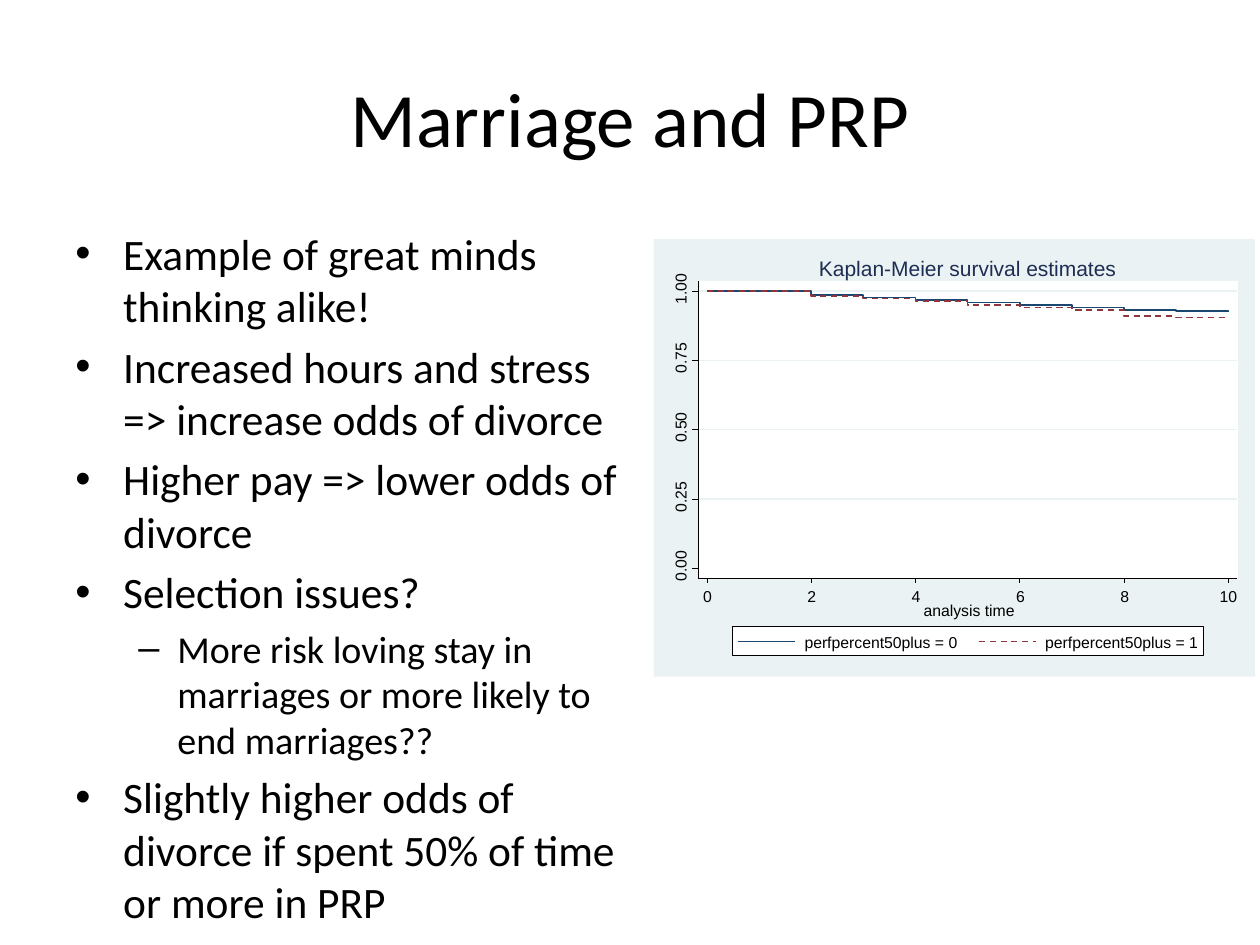
from dataclasses import dataclass
from typing import Optional

from lxml.etree import SubElement
from pptx import Presentation
from pptx.dml.color import RGBColor
from pptx.enum.dml import MSO_LINE
from pptx.enum.shapes import MSO_CONNECTOR, MSO_SHAPE
from pptx.enum.text import MSO_ANCHOR, MSO_AUTO_SIZE, PP_ALIGN
from pptx.oxml.ns import qn
from pptx.util import Inches, Length, Pt

COLORS = {
    "ink": "000000",
    "paper": "FFFFFF",
    "panel": "EAF2F3",
    "zero": "1A476F",
    "one": "90353B",
    "heading": "1E2D53",
}
COLUMNS, ROWS = 100, 75
THIN, THICK = 0.38, 0.88
PLOT_LEFT, PLOT_RIGHT, PLOT_TOP, PLOT_BOTTOM = 55.4, 98.2, 22.3, 45.9
LEGEND_ROW = 50.9

presentation = Presentation()
presentation.slide_width = Inches(10)
presentation.slide_height = Inches(7.5)
slide = presentation.slides.add_slide(presentation.slide_layouts[6])


@dataclass(frozen=True)
class Box:
    column: float
    row: float
    columns: float
    rows: float


@dataclass(frozen=True)
class Bullet:
    text: str
    level: int = 0


@dataclass(frozen=True)
class BulletStyle:
    mark: str
    size: float
    margin: float
    hanging: float


@dataclass(frozen=True)
class Series:
    name: str
    color: str
    dash: Optional[MSO_LINE]
    survival: tuple
    key_column: float


BULLET_STYLES = (
    BulletStyle("•", 24.8, 0.38, 0.38),
    BulletStyle("–", 21.7, 0.81, 0.31),
)
BULLETS = (
    Bullet("Example of great minds thinking alike!"),
    Bullet("Increased hours and stress => increase odds of divorce"),
    Bullet("Higher pay => lower odds of divorce"),
    Bullet("Selection issues?"),
    Bullet("More risk loving stay in marriages or more likely to end marriages??", 1),
    Bullet("Slightly higher odds of divorce if spent 50% of time or more in PRP"),
)
PANELS = (
    (Box(51.9, 19, 47.7, 34.7), "panel", None),
    (Box(51.9, 19, 47.5, 34.5), "panel", "panel"),
    (Box(PLOT_LEFT, PLOT_TOP, PLOT_RIGHT - PLOT_LEFT, 23.5), "paper", "paper"),
)
SERIES = (
    Series("perfpercent50plus = 0", "zero", None,
           (98.6, 97.7, 96.8, 95.9, 95, 94.1, 93.2, 92.7, 92.3), 58.6),
    Series("perfpercent50plus = 1", "one", MSO_LINE.DASH,
           (98.2, 97.3, 96.4, 95, 94.1, 93.2, 90.9, 90.5, 90.5), 77.7),
)


def across(column: float) -> Length:
    return Length(round(presentation.slide_width * column / COLUMNS))


def down(row: float) -> Length:
    return Length(round(presentation.slide_height * row / ROWS))


def place(box: Box) -> tuple:
    return across(box.column), down(box.row), across(box.columns), down(box.rows)


def time_column(time: float) -> float:
    return 56.1 + 4.14 * time


def survival_row(percent: float) -> float:
    return 45.1 - 0.22 * percent


def color(name: str) -> RGBColor:
    return RGBColor.from_string(COLORS[name])


def apply(target: object, values: dict) -> None:
    for name, value in values.items():
        setattr(target, name, value)


def style_line(shape: object, name: str, width: float, dash: Optional[MSO_LINE] = None) -> None:
    shape.line.color.rgb = color(name)
    apply(shape.line, {"width": Pt(width), "dash_style": dash})


def write(paragraph: object, text: str, size: float, font: str, name: str = "ink") -> None:
    run = paragraph.add_run()
    run.text = text
    apply(run.font, {"size": Pt(size), "name": font})
    run.font.color.rgb = color(name)


def draw_panel(box: Box, fill: str, line: Optional[str]) -> None:
    shape = slide.shapes.add_shape(MSO_SHAPE.RECTANGLE, *place(box))
    shape.shadow.inherit = False
    shape.fill.solid()
    shape.fill.fore_color.rgb = color(fill)
    if line:
        style_line(shape, line, THIN)
    else:
        shape.line.fill.background()


def draw_line(start: tuple, end: tuple, name: str = "ink", width: float = THIN,
              dash: Optional[MSO_LINE] = None) -> None:
    connector = slide.shapes.add_connector(
        MSO_CONNECTOR.STRAIGHT, across(start[0]), down(start[1]), across(end[0]), down(end[1]))
    SubElement(connector.element.spPr, qn("a:effectLst"))
    style_line(connector, name, width, dash)


def draw_label(text: str, box: Box, size: float = 9, name: str = "ink", rotation: float = 0) -> None:
    shape = slide.shapes.add_textbox(*place(box))
    shape.rotation = rotation
    apply(shape.text_frame, {
        "margin_left": 0, "margin_top": 0, "margin_right": 0, "margin_bottom": 0,
        "word_wrap": False, "auto_size": MSO_AUTO_SIZE.SHAPE_TO_FIT_TEXT,
    })
    write(shape.text_frame.paragraphs[0], text, size, "Arial", name)


def draw_curve(series: Series) -> None:
    points, level = [], 100
    for time, percent in enumerate(series.survival, start=2):
        points += [(time, level), (time, percent)]
        level = percent
    corners = [(across(time_column(time)), down(survival_row(percent))) for time, percent in points]
    builder = slide.shapes.build_freeform(across(time_column(0)), down(survival_row(100)))
    builder.add_line_segments(corners, close=False)
    shape = builder.convert_to_shape()
    shape.shadow.inherit = False
    shape.fill.background()
    style_line(shape, series.color, THICK, series.dash)


def draw_title(text: str) -> None:
    shape = slide.shapes.add_textbox(*place(Box(5, 3, 90, 12.5)))
    apply(shape.text_frame, {"word_wrap": True, "vertical_anchor": MSO_ANCHOR.MIDDLE})
    paragraph = shape.text_frame.paragraphs[0]
    paragraph.alignment = PP_ALIGN.CENTER
    write(paragraph, text, 44, "Calibri")


def draw_bullets(bullets: tuple) -> None:
    frame = slide.shapes.add_textbox(*place(Box(5, 17.5, 45, 49.5))).text_frame
    frame.word_wrap = True
    for index, bullet in enumerate(bullets):
        style = BULLET_STYLES[bullet.level]
        paragraph = frame.add_paragraph() if index else frame.paragraphs[0]
        apply(paragraph, {"level": bullet.level, "space_before": Pt(round(style.size / 5, 1))})
        properties = paragraph._p.get_or_add_pPr()
        properties.set("marL", str(Inches(style.margin)))
        properties.set("indent", str(-Inches(style.hanging)))
        SubElement(properties, qn("a:buFont"), typeface="Arial")
        SubElement(properties, qn("a:buChar"), char=style.mark)
        write(paragraph, bullet.text, style.size, "Calibri")


def draw_axes() -> None:
    draw_line((PLOT_LEFT, PLOT_BOTTOM), (PLOT_LEFT, PLOT_TOP))
    for percent in range(0, 101, 25):
        row = survival_row(percent)
        draw_line((PLOT_LEFT, row), (PLOT_LEFT - 0.5, row))
        draw_label(f"{percent / 100:.2f}", Box(52.6, row - 1.2, 2.9, 1.6), rotation=270)
    draw_line((PLOT_LEFT, PLOT_BOTTOM), (PLOT_RIGHT, PLOT_BOTTOM))
    for time in range(0, 11, 2):
        column = time_column(time)
        digits = len(str(time))
        draw_line((column, PLOT_BOTTOM), (column, PLOT_BOTTOM + 0.4))
        draw_label(str(time), Box(column + 0.1 - 0.4 * digits, 46.6, 0.5 + 0.7 * digits, 1.6))
    draw_label("analysis time", Box(73.3, 47.7, 7.7, 1.6))


def draw_legend() -> None:
    draw_panel(Box(58.1, 49.7, 37.4, 2.3), "paper", "ink")
    for series in SERIES:
        column = series.key_column
        draw_line((column, LEGEND_ROW), (column + 4.5, LEGEND_ROW), series.color, THICK, series.dash)
        draw_label(series.name, Box(column + 5.25, LEGEND_ROW - 0.7, 12.5, 1.6))


draw_title("Marriage and PRP")
draw_bullets(BULLETS)
for panel in PANELS:
    draw_panel(*panel)
for grid_percent in range(25, 101, 25):
    grid_row = survival_row(grid_percent)
    draw_line((PLOT_LEFT, grid_row), (PLOT_RIGHT, grid_row), "panel", THICK)
for curve in SERIES:
    draw_curve(curve)
draw_axes()
draw_legend()
draw_label("Kaplan-Meier survival estimates", Box(65, 20.3, 26.6, 2.5), 12, "heading")
presentation.save("out.pptx")
